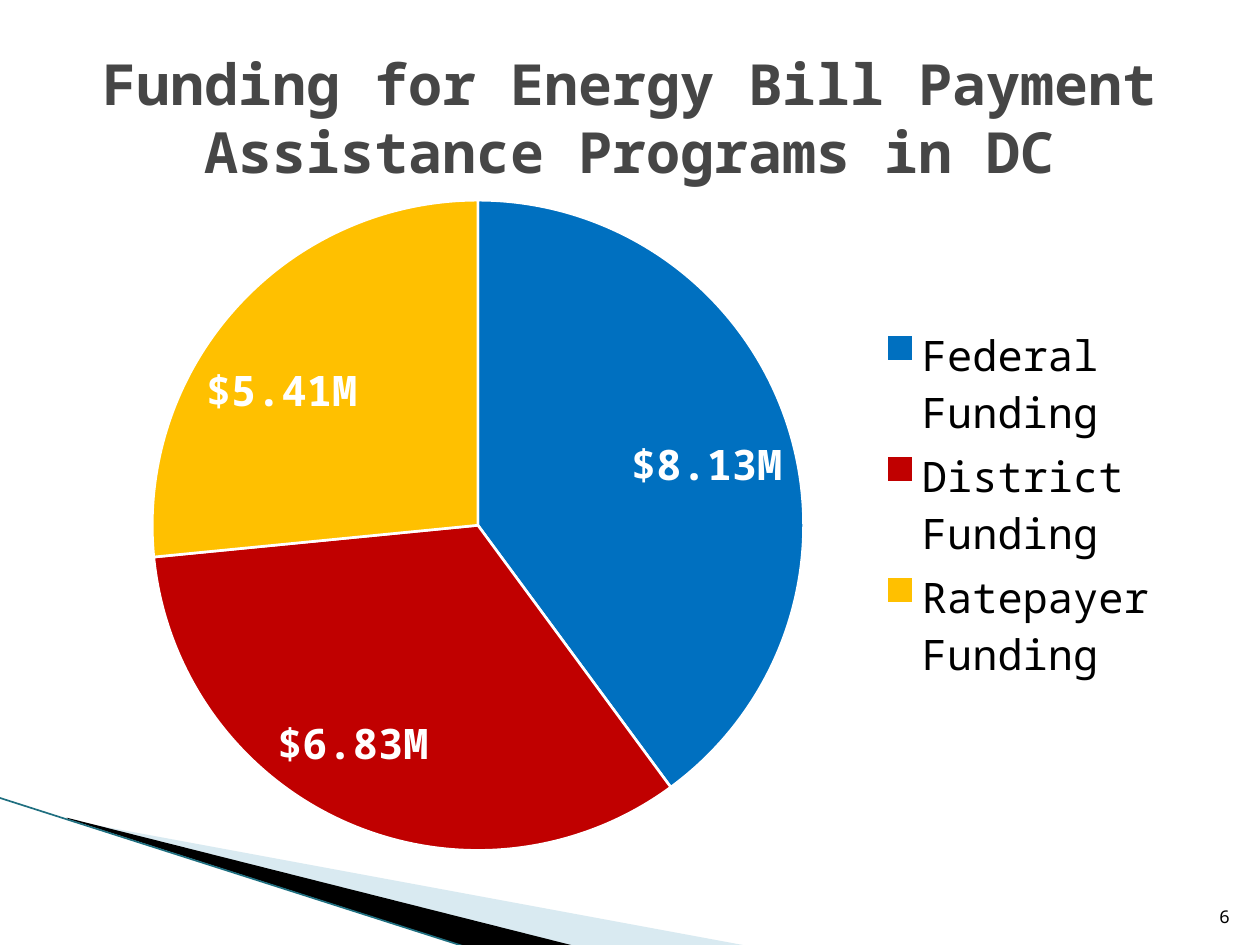
import pptx
import pptx.chart.data
import pptx.dml.color
import pptx.enum.chart
import pptx.enum.shapes
import pptx.enum.text
import pptx.oxml
import pptx.oxml.ns
import pptx.util
from lxml import etree
from pptx.util import Inches

FONT = "Noto Sans Mono"
FUNDING = {
    "Federal Funding": (8.13, "0070C0"),
    "District Funding": (6.83, "C00000"),
    "Ratepayer Funding": (5.41, "FFC000"),
}


def rgb(color):
    return pptx.dml.color.RGBColor.from_string(color)


def style_font(font, size, color, bold=False):
    font.name = FONT
    font.size = pptx.util.Pt(size)
    font.color.rgb = rgb(color)
    font.bold = bold


def add_wedge(slide, points, color, opacity=100):
    """Draw a filled polygon through points given in inches."""
    start, *rest = [(Inches(x), Inches(y)) for x, y in points]
    builder = slide.shapes.build_freeform(*start)
    builder.add_line_segments(rest, close=True)
    sp = builder.convert_to_shape()
    sp.shadow.inherit = False
    sp.fill.solid()
    sp.fill.fore_color.rgb = rgb(color)
    sp.line.fill.background()
    if opacity < 100:
        clr = sp.fill._xPr.find(".//" + pptx.oxml.ns.qn("a:srgbClr"))
        etree.SubElement(clr, pptx.oxml.ns.qn("a:alpha"), val=str(opacity * 1000))


def add_corner_sweep(slide, left, top):
    """Draw the wedges and edge line sweeping across the bottom left corner."""
    def place(*points):
        return [(left + x, top + y) for x, y in points]

    add_wedge(slide, place((0.55, 0.18), (5.95, 1.18), (4.56, 1.18), (0.55, 0.17)), "A0CBDC", 40)
    add_wedge(slide, place((0.53, 0.16), (4.57, 1.18), (3.72, 1.19), (0.54, 0.17)), "000000")
    edge = slide.shapes.add_connector(
        pptx.enum.shapes.MSO_CONNECTOR.STRAIGHT,
        Inches(left - 0.01), Inches(top), Inches(left + 3.71), Inches(top + 1.19))
    edge.line.color.rgb = rgb("1F6F80")
    edge.line.width = pptx.util.Pt(0.95)
    etree.SubElement(edge._element.spPr, pptx.oxml.ns.qn("a:effectLst"))


def add_text(slide, box, text, size, color, align, anchor, bold=False):
    tf = slide.shapes.add_textbox(*map(Inches, box)).text_frame
    tf.word_wrap = True
    tf.vertical_anchor = anchor
    tf.margin_left = tf.margin_right = Inches(0.1)
    tf.text = text
    p = tf.paragraphs[0]
    p.alignment = align
    style_font(p.runs[0].font, size, color, bold)


def set_plot_layout(chart, x, y, w, h):
    """Fix the inner plot area, in fractions of the chart box."""
    plot_area = chart._chartSpace.chart.plotArea
    for old in plot_area.findall(pptx.oxml.ns.qn("c:layout")):
        plot_area.remove(old)
    settings = {"layoutTarget": "inner", "xMode": "edge", "yMode": "edge",
                "x": x, "y": y, "w": w, "h": h}
    children = "".join(f'<c:{tag} val="{val}"/>' for tag, val in settings.items())
    plot_area.insert(0, pptx.oxml.parse_xml(
        f'<c:layout {pptx.oxml.ns.nsdecls("c")}>'
        f"<c:manualLayout>{children}</c:manualLayout></c:layout>"))


def add_funding_pie(slide, box):
    data = pptx.chart.data.CategoryChartData()
    data.categories = list(FUNDING)
    data.add_series("Series 1", [value for value, _ in FUNDING.values()])
    chart = slide.shapes.add_chart(
        pptx.enum.chart.XL_CHART_TYPE.PIE, *map(Inches, box), data).chart
    chart.has_title = False
    style_font(chart.font, 10, "000000")
    set_plot_layout(chart, 0.06, 0.06, 0.6, 0.94)

    chart.has_legend = True
    chart.legend.position = pptx.enum.chart.XL_LEGEND_POSITION.RIGHT
    chart.legend.include_in_layout = False
    style_font(chart.legend.font, 24, "000000")

    plot = chart.plots[0]
    plot.vary_by_categories = True
    for i, (_, color) in enumerate(FUNDING.values()):
        fmt = plot.series[0].points[i].format
        fmt.fill.solid()
        fmt.fill.fore_color.rgb = rgb(color)
        fmt.line.color.rgb = rgb("FFFFFF")
        fmt.line.width = pptx.util.Pt(1.5)

    labels = plot.series[0].data_labels
    labels.show_value = True
    labels.number_format = '"$"#,##0.00"M"'
    labels.number_format_is_linked = False
    labels.position = pptx.enum.chart.XL_LABEL_POSITION.BEST_FIT
    style_font(labels.font, 24, "FFFFFF", bold=True)


def main():
    prs = pptx.Presentation()
    prs.slide_width, prs.slide_height = Inches(10), Inches(7.5)
    slide = prs.slides.add_slide(prs.slide_layouts[6])
    align, anchor = pptx.enum.text.PP_ALIGN, pptx.enum.text.MSO_ANCHOR

    add_corner_sweep(slide, 0, 6.33)
    add_text(slide, (0.5, 0.3, 9, 1.25),
             "Funding for Energy Bill Payment Assistance Programs in DC",
             32.4, "464646", align.CENTER, anchor.MIDDLE, bold=True)
    add_text(slide, (9.46, 7.01, 0.4, 0.4), "6", 10, "000000", align.RIGHT, anchor.BOTTOM)
    add_funding_pie(slide, (0.69, 1.26, 8.62, 5.5))
    prs.save("out.pptx")


if __name__ == "__main__":
    main()
